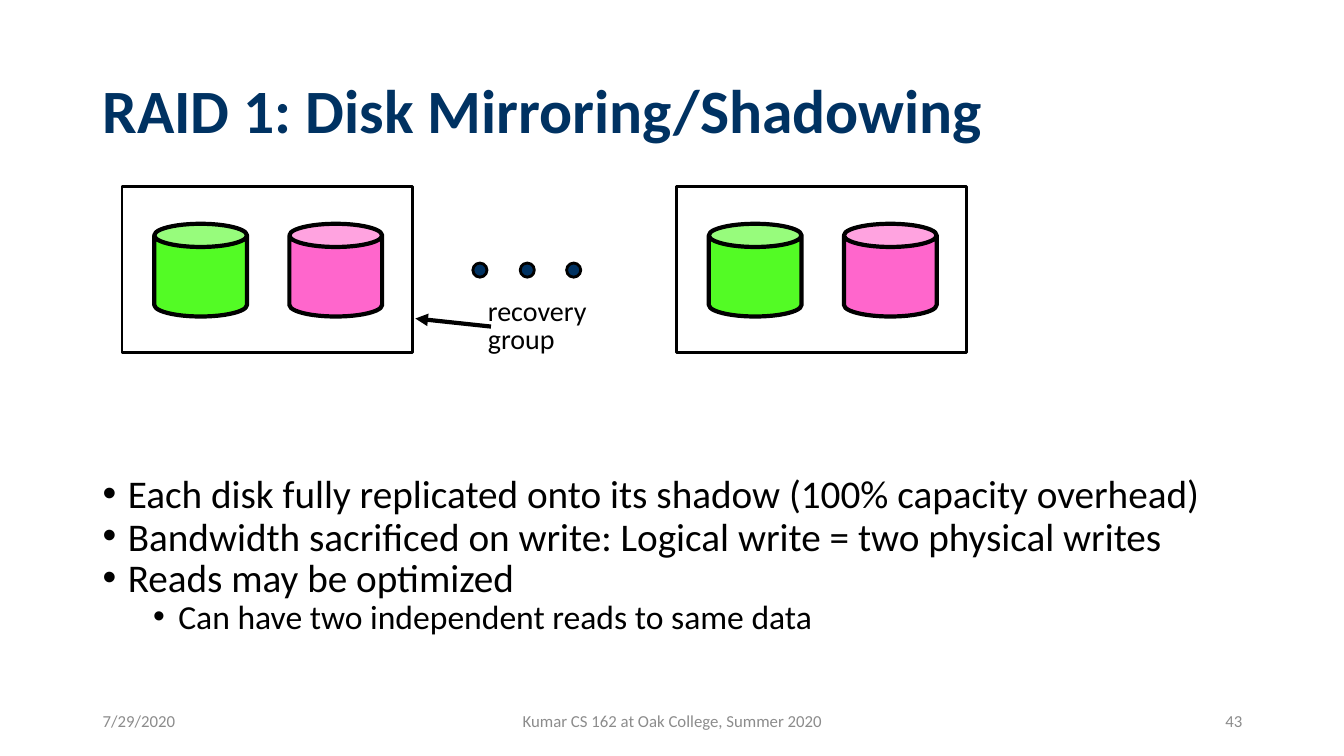
from dataclasses import dataclass

from lxml.etree import SubElement
from pptx import Presentation
from pptx.dml.color import RGBColor
from pptx.enum.shapes import MSO_CONNECTOR, MSO_SHAPE
from pptx.enum.text import MSO_ANCHOR, MSO_AUTO_SIZE, PP_ALIGN
from pptx.oxml.ns import qn
from pptx.util import Pt

PX = 9144  # EMU in one px, 100 px to the inch


@dataclass(frozen=True)
class Theme:
    font: str = "Calibri"
    navy: str = "003262"
    black: str = "000000"
    grey: str = "8C8C8C"
    green: str = "53FB25"
    pink: str = "FF66CC"
    title: int = 44
    body: int = 28
    sub: int = 24
    label: int = 20
    footer: int = 12


THEME = Theme()


def px(*lengths):
    return [length * PX for length in lengths]


def add_bullet(para, left, hang):
    props = para._p.get_or_add_pPr()
    props.set("marL", str(left * PX))
    props.set("indent", str(-hang * PX))
    SubElement(props, qn("a:buFont"), typeface="Arial")
    SubElement(props, qn("a:buChar"), char="•")


def write(para, text, size, color=THEME.black, bold=False, align=PP_ALIGN.LEFT,
          spacing=1.0, before=0):
    """Put text into a paragraph with its format."""
    para.alignment = align
    para.line_spacing = spacing
    para.space_before = Pt(before)
    span = para.add_run()
    span.text = text
    span.font.name = THEME.font
    span.font.size = Pt(size)
    span.font.bold = bold
    span.font.color.rgb = RGBColor.from_string(color)


def add_box(page, at, anchor=MSO_ANCHOR.TOP, wrap=True):
    frame = page.shapes.add_textbox(*px(*at)).text_frame
    frame.word_wrap = wrap
    frame.auto_size = MSO_AUTO_SIZE.NONE if wrap else MSO_AUTO_SIZE.SHAPE_TO_FIT_TEXT
    frame.vertical_anchor = anchor
    return frame


def add_line_of_text(page, at, text, **style):
    write(add_box(page, at, MSO_ANCHOR.MIDDLE).paragraphs[0], text, **style)


def add_paragraphs(frame, count):
    return [frame.paragraphs[0]] + [frame.add_paragraph() for _ in range(count - 1)]


def add_figure(page, kind, at, fill=None, weight=2):
    figure = page.shapes.add_shape(kind, *px(*at))
    figure.shadow.inherit = False
    if fill:
        figure.fill.solid()
        figure.fill.fore_color.rgb = RGBColor.from_string(fill)
    else:
        figure.fill.background()
    figure.line.color.rgb = RGBColor.from_string(THEME.black)
    figure.line.width = Pt(weight)
    return figure


def add_recovery_group(page, left, top):
    """A frame that holds a disk and its shadow."""
    add_figure(page, MSO_SHAPE.RECTANGLE, (left, top, 288, 165))
    for offset, color in ((32, THEME.green), (166, THEME.pink)):
        disk = add_figure(page, MSO_SHAPE.CAN, (left + offset, top + 37, 92, 92), color, 3)
        disk.adjustments[0] = 0.25


def add_arrow(page, start, end):
    arrow = page.shapes.add_connector(MSO_CONNECTOR.STRAIGHT, *px(*start, *end))
    arrow.line.color.rgb = RGBColor.from_string(THEME.black)
    arrow.line.width = Pt(3)
    SubElement(arrow.line._get_or_add_ln(), qn("a:tailEnd"), type="triangle")
    SubElement(arrow._element.spPr, qn("a:effectLst"))


def add_bullets(page, at, bullets):
    paras = add_paragraphs(add_box(page, at), len(bullets))
    for para, (text, level, spacing, before) in zip(paras, bullets):
        para.level = level
        write(para, text, THEME.sub if level else THEME.body,
              spacing=spacing, before=before)
        add_bullet(para, 25 + 50 * level, 25)


def main():
    deck = Presentation()
    deck.slide_width, deck.slide_height = px(1333, 750)
    page = deck.slides.add_slide(deck.slide_layouts[6])

    # Title and bullets
    add_line_of_text(page, (92, 40, 1150, 145), "RAID 1: Disk Mirroring/Shadowing",
                     size=THEME.title, color=THEME.navy, bold=True, spacing=0.9)
    add_bullets(page, (92, 466, 1150, 210), [
        ("Each disk fully replicated onto its shadow (100% capacity overhead)", 0, 0.9, 10),
        ("Bandwidth sacrificed on write: Logical write = two physical writes", 0, 0.8, 2.8),
        ("Reads may be optimized", 0, 0.8, 2.8),
        ("Can have two independent reads to same data", 1, 0.8, 2.4),
    ])

    # Footer
    for left, width, text, align in (
        (92, 300, "7/29/2020", PP_ALIGN.LEFT),
        (442, 450, "Kumar CS 162 at Oak College, Summer 2020", PP_ALIGN.CENTER),
        (942, 300, "43", PP_ALIGN.RIGHT),
    ):
        add_line_of_text(page, (left, 695, width, 40), text,
                         size=THEME.footer, color=THEME.grey, align=align)

    # Mirrored disks with dots between the groups
    for left in (121, 671):
        add_recovery_group(page, left, 185)
    for left in (469, 516, 562):
        add_figure(page, MSO_SHAPE.OVAL, (left, 261, 14, 14), THEME.navy)

    # Label and its arrow
    add_arrow(page, (487, 324), (412, 316))
    words = ("recovery", "group")
    label = add_box(page, (474, 291, 121, 67), wrap=False)
    for para, word in zip(add_paragraphs(label, len(words)), words):
        write(para, word, THEME.label, spacing=0.85)

    deck.save("out.pptx")


if __name__ == "__main__":
    main()
